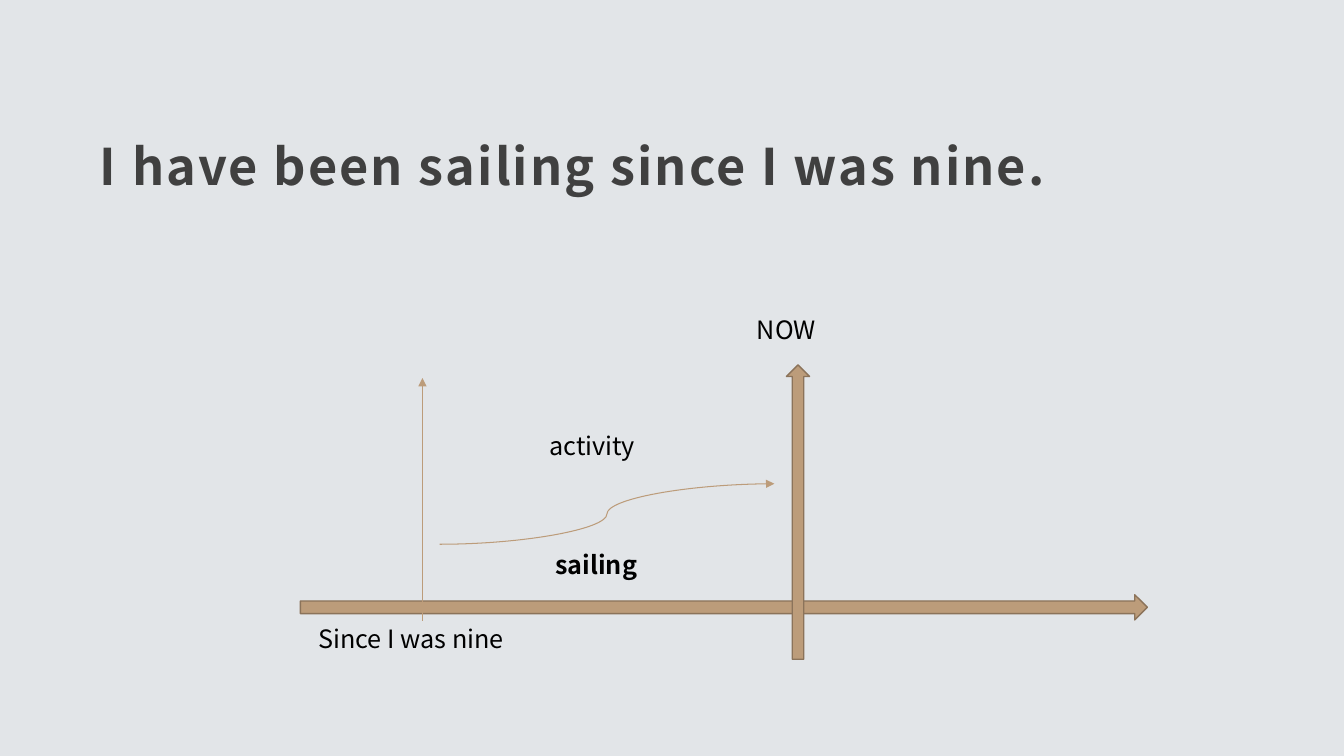
from lxml.etree import SubElement
from pptx import Presentation
from pptx.dml.color import RGBColor
from pptx.enum.shapes import MSO_CONNECTOR as Link, MSO_SHAPE as Shape
from pptx.enum.text import MSO_ANCHOR as Anchor, MSO_AUTO_SIZE as Fit, PP_ALIGN as Align
from pptx.oxml.ns import qn
from pptx.util import Inches, Pt

FONT = "Noto Sans CJK JP"
BACK = RGBColor(0xE2, 0xE5, 0xE8)
GREY = RGBColor(0x40, 0x40, 0x40)
BLACK = RGBColor(0, 0, 0)
TAN = RGBColor(0xBC, 0x9C, 0x7A)
BROWN = RGBColor(0x8B, 0x73, 0x5A)

TITLE = "I have been sailing since I was nine."
AXES = [
    (Shape.RIGHT_ARROW, 2.98, 5.9, 8.4, 0.25),
    (Shape.UP_ARROW, 7.8, 3.62, 0.23, 2.92),
]
LINES = [
    (Link.STRAIGHT, 4.19, 6.16, 4.19, 3.75),
    (Link.CURVE, 4.36, 5.4, 7.68, 4.8),
]
LABELS = [
    ("NOW", 7.41, 3.07, 1, False),
    ("activity", 5.35, 4.22, 1.24, False),
    ("sailing", 5.41, 5.4, 1.39, True),
    ("Since I was nine", 3.06, 6.13, 2.44, False),
]


def style(para, size, color, bold):
    font = para.font
    font.name, font.size, font.bold = FONT, Pt(size), bold
    font.color.rgb = color
    para.alignment = Align.LEFT


def add_title(slide):
    box = slide.shapes.title
    box.left, box.top, box.width, box.height = map(Inches, (0.87, 0.06, 11.59, 2.84))
    frame = box.text_frame
    frame.text = TITLE
    frame.auto_size = Fit.NONE
    frame.word_wrap = True
    frame.vertical_anchor = Anchor.MIDDLE
    frame.margin_left = frame.margin_right = frame.margin_top = Inches(0.12)
    frame.margin_bottom = Inches(0.1)
    para = frame.paragraphs[0]
    para.line_spacing = 1.5
    style(para, 36, GREY, True)
    para.runs[0]._r.get_or_add_rPr().set("spc", "150")


def add_axis(slide, kind, *place):
    axis = slide.shapes.add_shape(kind, *map(Inches, place))
    axis.shadow.inherit = False
    axis.fill.solid()
    axis.fill.fore_color.rgb = TAN
    axis.line.color.rgb = BROWN
    axis.line.width = Pt(1)


def add_line(slide, kind, *ends):
    link = slide.shapes.add_connector(kind, *map(Inches, ends))
    link.line.color.rgb = TAN
    link.line.width = Pt(0.75)
    SubElement(link.line._get_or_add_ln(), qn("a:tailEnd"), type="triangle")
    SubElement(link._element.spPr, qn("a:effectLst"))


def add_label(slide, text, left, top, width, bold):
    box = slide.shapes.add_textbox(*map(Inches, (left, top, width, 0.4)))
    frame = box.text_frame
    frame.word_wrap = True
    frame.auto_size = Fit.SHAPE_TO_FIT_TEXT
    frame.text = text
    style(frame.paragraphs[0], 18, BLACK, bold)


def main():
    """Build the timeline slide."""
    deck = Presentation()
    deck.slide_width, deck.slide_height = Inches(13.33), Inches(7.5)
    slide = deck.slides.add_slide(deck.slide_layouts[5])
    slide.background.fill.solid()
    slide.background.fill.fore_color.rgb = BACK
    add_title(slide)
    for axis in AXES:
        add_axis(slide, *axis)
    for line in LINES:
        add_line(slide, *line)
    for label in LABELS:
        add_label(slide, *label)
    deck.save("out.pptx")


if __name__ == "__main__":
    main()
